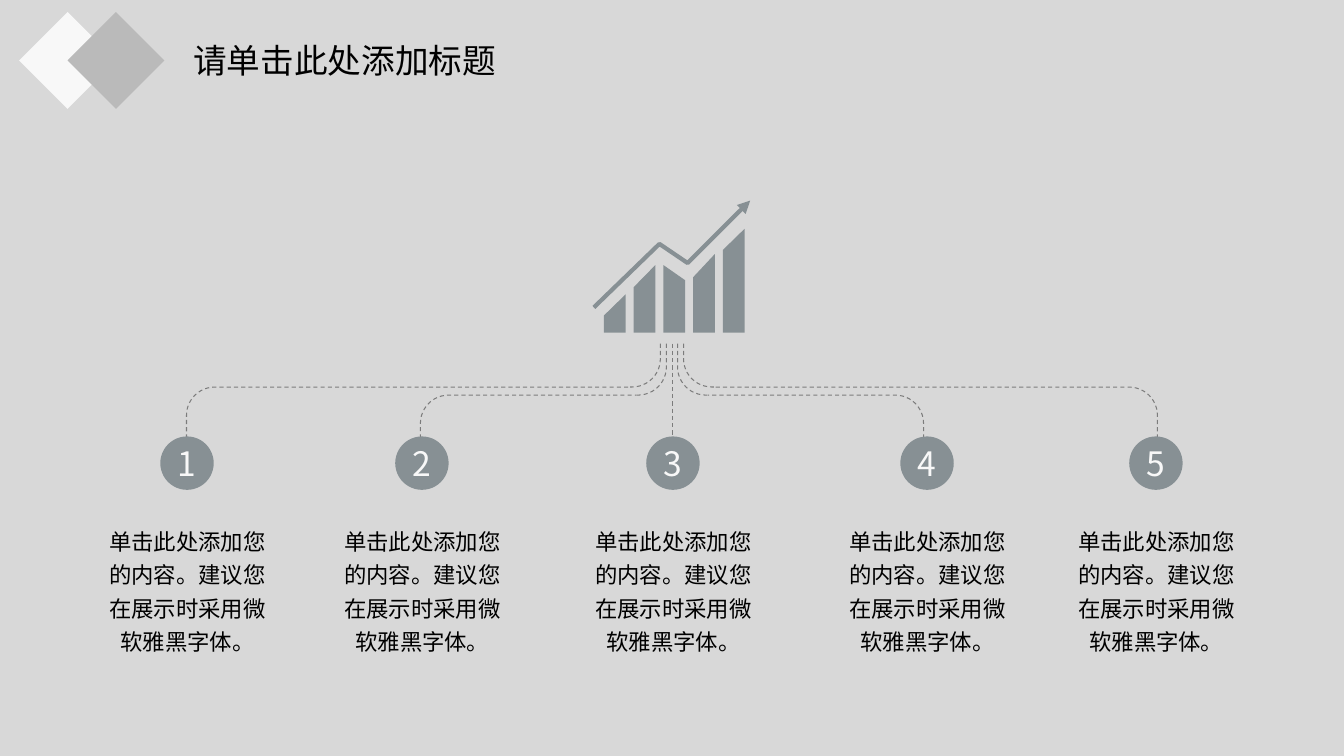
import math
import pptx
import pptx.util
import pptx.dml.color
import pptx.enum.dml
import pptx.enum.shapes
import pptx.enum.text
import pptx.oxml.ns
from lxml import etree

Inches = pptx.util.Inches
Pt = pptx.util.Pt
KIND = pptx.enum.shapes.MSO_SHAPE
ALIGN = pptx.enum.text.PP_ALIGN
FONT = "Noto Sans CJK SC"
COLORS = {"page": "F8F8F8", "back": "D8D8D8", "gem": "BABABA",
          "slate": "879094", "wire": "7C7C7C", "ink": "000000"}
BODY = "单击此处添加您的内容。建议您在展示时采用微软雅黑字体。"
WIDE = 13.33


def color(name):
    return pptx.dml.color.RGBColor.from_string(COLORS[name])


def add_sub(parent, tag, **attrs):
    return etree.SubElement(parent, pptx.oxml.ns.qn(tag), attrs)


def paint(shape, fill):
    shape.shadow.inherit = False
    shape.fill.solid()
    shape.fill.fore_color.rgb = color(fill)
    shape.line.fill.background()


def stroke(line, name, width, dash=False):
    line.color.rgb = color(name)
    line.width = Pt(width)
    if dash:
        line.dash_style = pptx.enum.dml.MSO_LINE.DASH


def add_block(slide, kind, x, y, w, h, fill, turn=0):
    shape = slide.shapes.add_shape(kind, Inches(x), Inches(y), Inches(w), Inches(h))
    shape.rotation = turn
    paint(shape, fill)


def add_text(slide, text, x, y, w, h, size, ink, align=None, inset=True):
    box = slide.shapes.add_textbox(Inches(x), Inches(y), Inches(w), Inches(h))
    frame = box.text_frame
    frame.word_wrap = True
    if not inset:
        frame.margin_left = frame.margin_right = 0
        frame.margin_top = frame.margin_bottom = 0
    frame.text = text
    para = frame.paragraphs[0]
    para.alignment = align
    font = para.runs[0].font
    font.size = Pt(size)
    font.name = FONT
    font.color.rgb = color(ink)
    add_sub(font._element, "a:ea", typeface=FONT)
    return para


def add_free(slide, points, close=False):
    dots = [(Inches(x), Inches(y)) for x, y in points]
    pen = slide.shapes.build_freeform(*dots[0], scale=1.0)
    pen.add_line_segments(dots[1:], close=close)
    shape = pen.convert_to_shape()
    shape.shadow.inherit = False
    return shape


def add_path(slide, points, name, width, dash=False):
    shape = add_free(slide, points)
    shape.fill.background()
    stroke(shape.line, name, width, dash)
    return shape


def bend(x, y, end, bar, radius=0.28, steps=12):
    """Points of a leg from (x, y) that turns into a bar ending at x = end."""
    side = math.copysign(radius, end - x)
    rise = math.copysign(radius, y - bar)
    turns = [i * math.pi / 2 / steps for i in range(steps + 1)]
    arc = [(x + side * (1 - math.cos(t)), bar + rise * (1 - math.sin(t)))
           for t in turns]
    return [(x, y)] + arc + [(end, bar)]


def add_head(slide):
    for x, fill in ((0.33, "page"), (0.81, "gem")):
        add_block(slide, KIND.RECTANGLE, x, 0.26, 0.68, 0.68, fill, 45)
    add_text(slide, "请单击此处添加标题", 1.82, 0.35, 5.33, 0.5, 24, "ink")


def add_icon(slide):
    # Bars with slanted tops: left and right height
    tops = ((3.13, 2.92), (2.85, 2.63), (2.63, 2.78), (2.75, 2.52), (2.48, 2.27))
    for i, (left, right) in enumerate(tops):
        x, end = 5.99 + 0.295 * i, 6.205 + 0.295 * i
        bar = add_free(slide, [(x, left), (end, right), (end, 3.3), (x, 3.3)], True)
        paint(bar, "slate")
    # Rising arrow
    arrow = add_path(slide, [(5.89, 3.05), (6.54, 2.42), (6.82, 2.61), (7.44, 1.99)],
                     "slate", 3)
    add_sub(arrow.line._get_or_add_ln(), "a:tailEnd", type="triangle")


def add_wires(slide):
    mid = Inches(6.67)
    wire = slide.shapes.add_connector(pptx.enum.shapes.MSO_CONNECTOR.STRAIGHT,
                                      mid, Inches(3.41), mid, Inches(4.35))
    stroke(wire.line, "wire", 0.75, True)
    add_sub(wire._element.spPr, "a:effectLst")
    # Each branch is a foot and a stem that meet, mirrored to the right
    for foot, stem, bar in ((1.85, 6.55, 3.84), (4.17, 6.61, 3.92)):
        joint = stem - 0.3
        for leg in (bend(foot, 4.35, joint, bar), bend(stem, 3.41, joint, bar)):
            add_path(slide, leg, "wire", 0.75, True)
            add_path(slide, [(WIDE - x, y) for x, y in leg], "wire", 0.75, True)


def add_item(slide, num, x):
    add_block(slide, KIND.OVAL, x, 4.33, 0.53, 0.53, "slate")
    add_text(slide, str(num), x + 0.05, 4.39, 0.42, 0.41, 24, "page",
             ALIGN.CENTER, False)
    para = add_text(slide, BODY, x - 0.58, 5.17, 1.7, 0.9, 16, "ink",
                    ALIGN.CENTER, False)
    para.line_spacing = 1.25
    para.space_after = Pt(16)


def main():
    deck = pptx.Presentation()
    deck.slide_width, deck.slide_height = Inches(WIDE), Inches(7.5)
    slide = deck.slides.add_slide(deck.slide_layouts[6])
    # Backdrop
    slide.background.fill.solid()
    slide.background.fill.fore_color.rgb = color("page")
    add_block(slide, KIND.RECTANGLE, 0, 0, WIDE, 7.5, "back")
    # Content
    add_head(slide)
    add_icon(slide)
    add_wires(slide)
    for num, x in enumerate((1.59, 3.92, 6.41, 8.93, 11.2), 1):
        add_item(slide, num, x)
    deck.save("out.pptx")


if __name__ == "__main__":
    main()
